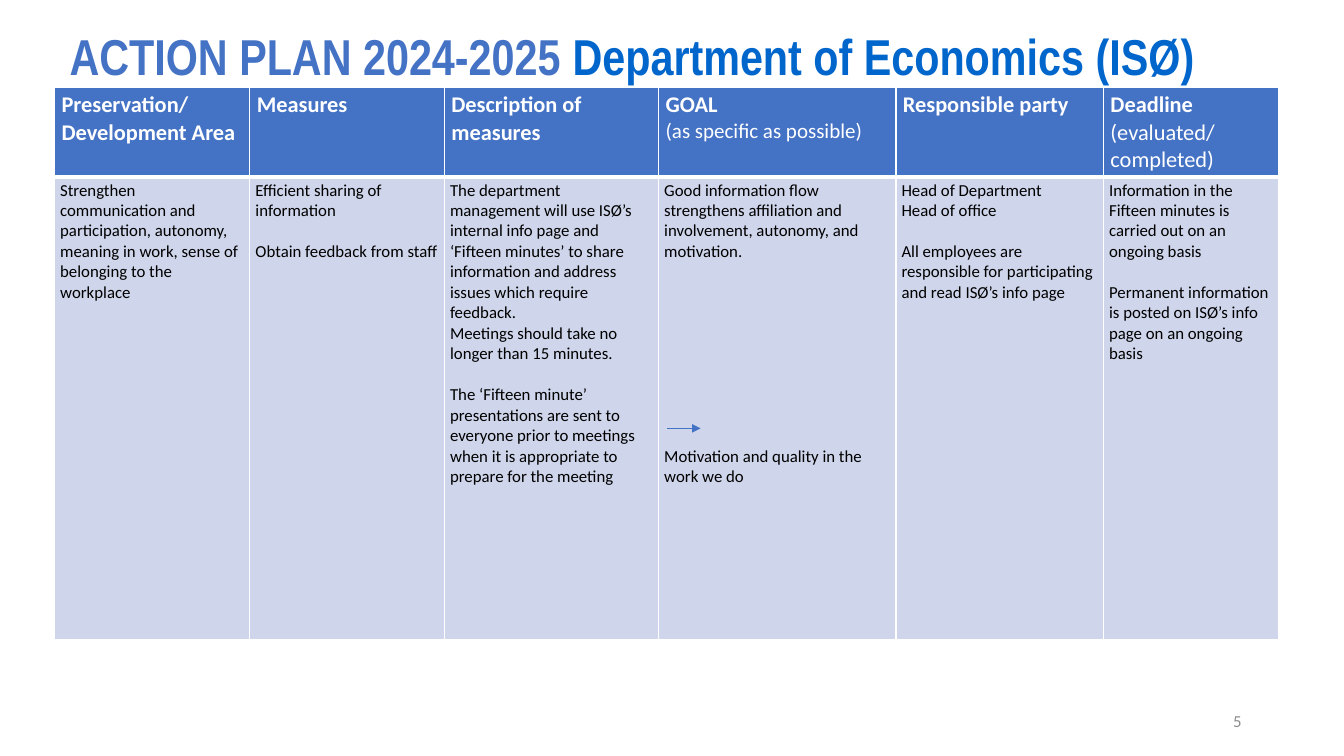
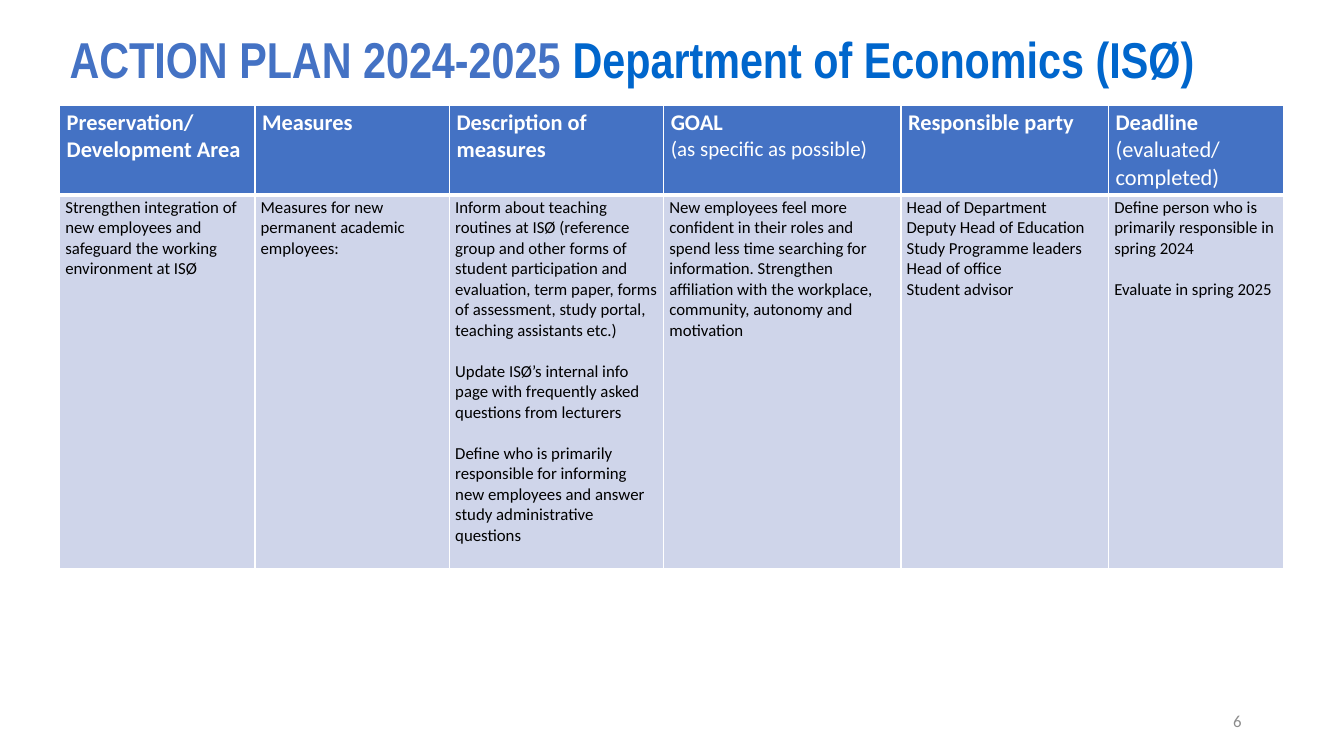
from lxml import etree
from pptx import Presentation
from pptx.dml.color import RGBColor
from pptx.enum.shapes import MSO_CONNECTOR as Conn
from pptx.enum.text import MSO_ANCHOR as Anchor, MSO_AUTO_SIZE as Fit, PP_ALIGN as Align
from pptx.oxml.ns import qn
from pptx.util import Pt

HUE = {"blue": "4472C4", "link": "0066CC", "pale": "CFD5EA",
       "white": "FFFFFF", "black": "000000", "gray": "8C8C8C"}
TITLE = [("ACTION PLAN 2024-2025 ", "blue"), ("Department of Economics (ISØ)", "link")]
BODY = "Calibri"
LINE = 14.64
COLS = [139.5, 139, 153, 169.5, 148.3, 125.3]
HEAD_H = 63.8

HEADS = [
    [("Preservation/", 16, True), ("Development Area", 16, True)],
    [("Measures", 16, True)],
    [("Description of measures", 16, True)],
    [("GOAL", 16, True), ("(as specific as possible)", 15, False)],
    [("Responsible party", 16, True)],
    [("Deadline", 16, True), ("(evaluated/", 16, False), ("completed)", 16, False)],
]

PLANS = [
    {"page": 5, "title_h": 39, "at": (39, 62.8), "row_h": 330,
     "arrow": (476.6, 306, 500.4, 306),
     "cells": [
         [(0, "Strengthen communication and participation, autonomy, meaning in work, "
              "sense of belonging to the workplace")],
         [(0, "Efficient sharing of information"), (1, "Obtain feedback from staff")],
         [(0, "The department management will use ISØ’s internal info page and "
              "‘Fifteen minutes’ to share information and address issues which "
              "require feedback."),
          (0, "Meetings should take no longer than 15 minutes."),
          (1, "The ‘Fifteen minute’ presentations are sent to everyone prior to "
              "meetings when it is appropriate to prepare for the meeting")],
         [(0, "Good information flow strengthens affiliation and involvement, "
              "autonomy, and motivation."),
          (9, "Motivation and quality in the work we do")],
         [(0, "Head of Department"), (0, "Head of office"),
          (1, "All employees are responsible for participating and read ISØ’s info page")],
         [(0, "Information in the Fifteen minutes is carried out on an ongoing basis"),
          (1, "Permanent information is posted on ISØ’s info page on an ongoing basis")],
     ]},
    {"page": 6, "title_h": 43, "at": (42.7, 75.2), "row_h": 267, "arrow": None,
     "cells": [
         [(0, "Strengthen integration of new employees and safeguard the working "
              "environment at ISØ")],
         [(0, "Measures for new permanent academic employees:")],
         [(0, "Inform about teaching routines at ISØ (reference group and other forms "
              "of student participation and evaluation, term paper, forms of "
              "assessment, study portal, teaching assistants etc.)"),
          (1, "Update ISØ’s internal info page with frequently asked questions "
              "from lecturers"),
          (1, "Define who is primarily responsible for informing new employees and "
              "answer study administrative questions")],
         [(0, "New employees feel more confident in their roles and spend less time "
              "searching for information. Strengthen affiliation with the workplace, "
              "community, autonomy and motivation")],
         [(0, "Head of Department"), (0, "Deputy Head of Education"),
          (0, "Study Programme leaders"), (0, "Head of office"), (0, "Student advisor")],
         [(0, "Define person who is primarily responsible in spring 2024"),
          (1, "Evaluate in spring 2025")],
     ]},
]


def color(name):
    return RGBColor.from_string(HUE[name])


def add_run(para, text, size, hue, font=BODY, bold=False):
    run = para.add_run()
    run.text = text
    run.font.name, run.font.size, run.font.bold = font, Pt(size), bold
    run.font.color.rgb = color(hue)


def add_title(slide, height):
    box = slide.shapes.title
    box.left, box.top, box.width, box.height = Pt(42.5), Pt(23), Pt(864), Pt(height)
    frame = box.text_frame
    frame.auto_size, frame.word_wrap = Fit.NONE, True
    frame.vertical_anchor = Anchor.MIDDLE
    para = frame.paragraphs[0]
    para.alignment, para.line_spacing = Align.LEFT, 0.9
    for text, hue in TITLE:
        add_run(para, text, 36, hue, "Arial Narrow", True)


def add_edges(cell, base):
    props = cell._tc.get_or_add_tcPr()
    for side, width in (("L", 1), ("R", 1), ("T", 1), ("B", base)):
        line = etree.SubElement(props, qn("a:ln" + side), w=str(Pt(width)))
        fill = etree.SubElement(line, qn("a:solidFill"))
        etree.SubElement(fill, qn("a:srgbClr"), val=HUE["white"])


def fill_cell(cell, paras, hue, ink, inset, base):
    add_edges(cell, base)
    cell.fill.solid()
    cell.fill.fore_color.rgb = color(hue)
    cell.margin_left = cell.margin_right = Pt(inset[0])
    cell.margin_top = cell.margin_bottom = Pt(inset[1])
    cell.vertical_anchor = Anchor.TOP
    frame = cell.text_frame
    for i, (gap, text, size, bold) in enumerate(paras):
        para = frame.add_paragraph() if i else frame.paragraphs[0]
        if gap:
            para.space_before = Pt(gap * LINE)
        add_run(para, text, size, ink, bold=bold)


def add_plan(slide, plan):
    left, top = plan["at"]
    rows = (HEAD_H, plan["row_h"])
    grid = slide.shapes.add_table(2, len(COLS), Pt(left), Pt(top),
                                  Pt(sum(COLS)), Pt(sum(rows))).table
    for row, height in zip(grid.rows, rows):
        row.height = Pt(height)
    for i, (width, head, body) in enumerate(zip(COLS, HEADS, plan["cells"])):
        grid.columns[i].width = Pt(width)
        fill_cell(grid.cell(0, i), [(0, *item) for item in head],
                  "blue", "white", (5, 2.6), 3)
        fill_cell(grid.cell(1, i), [(*item, 12, False) for item in body],
                  "pale", "black", (4, 2), 1)


def add_arrow(slide, ends):
    arrow = slide.shapes.add_connector(Conn.STRAIGHT, *map(Pt, ends))
    arrow.line.color.rgb = color("blue")
    arrow.line.width = Pt(0.5)
    props = arrow._element.spPr
    etree.SubElement(props.get_or_add_ln(), qn("a:tailEnd"), type="triangle")
    etree.SubElement(props, qn("a:effectLst"))


def add_page(slide, page):
    box = slide.shapes.add_textbox(Pt(678), Pt(500.5), Pt(216), Pt(28.8))
    frame = box.text_frame
    frame.word_wrap, frame.vertical_anchor = True, Anchor.MIDDLE
    para = frame.paragraphs[0]
    para.alignment = Align.RIGHT
    add_run(para, str(page), 12, "gray")


def main():
    deck = Presentation()
    deck.slide_width, deck.slide_height = Pt(960), Pt(540)
    for plan in PLANS:
        slide = deck.slides.add_slide(deck.slide_layouts[5])
        add_title(slide, plan["title_h"])
        add_plan(slide, plan)
        if plan["arrow"]:
            add_arrow(slide, plan["arrow"])
        add_page(slide, plan["page"])
    deck.save("out.pptx")


if __name__ == "__main__":
    main()
